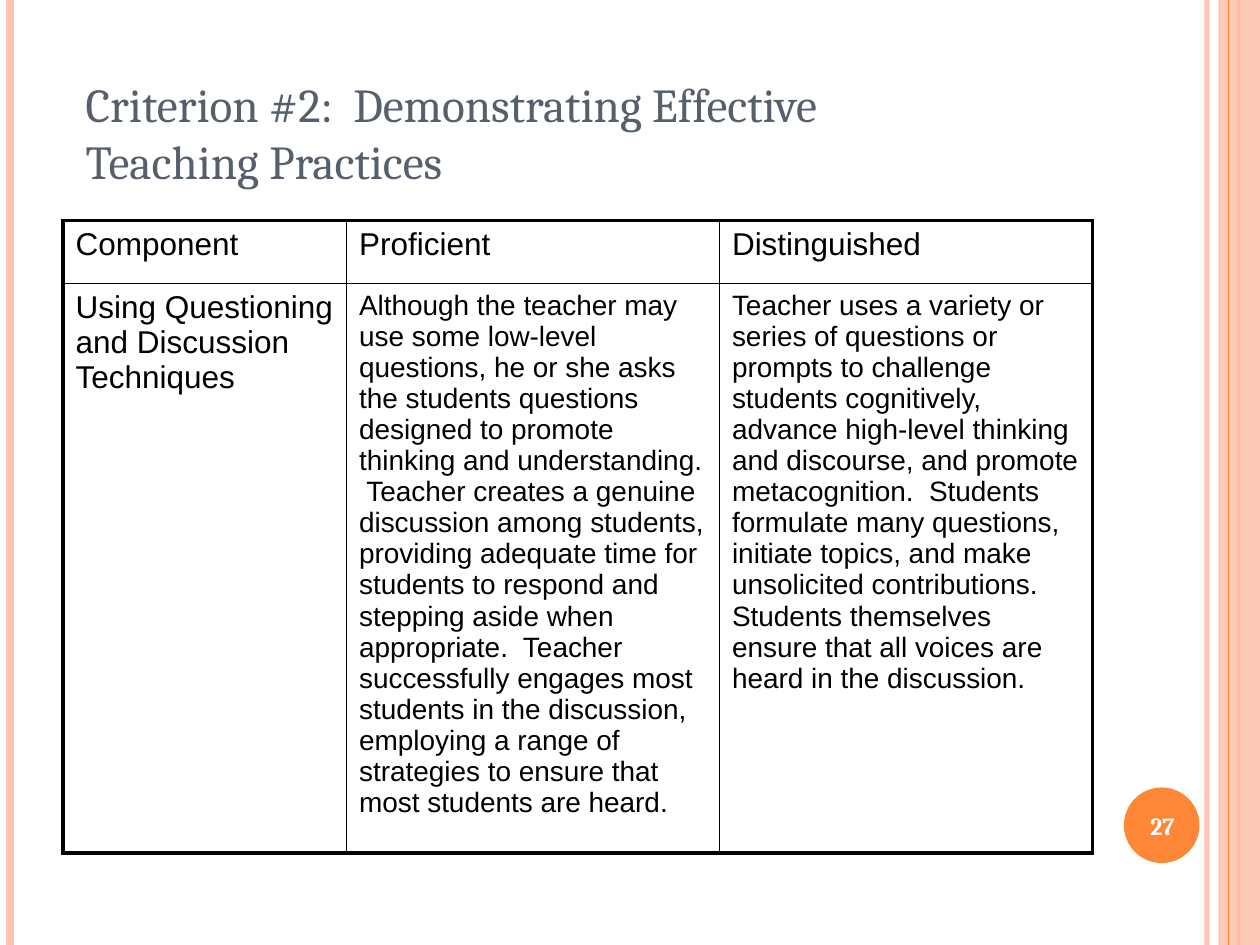
from pptx import Presentation
from pptx.dml.color import RGBColor
from pptx.enum.shapes import MSO_CONNECTOR, MSO_SHAPE
from pptx.enum.text import MSO_ANCHOR, PP_ALIGN
from pptx.oxml.ns import qn
from pptx.util import Inches, Pt
from lxml import etree

LINE = MSO_CONNECTOR.STRAIGHT
RECT, OVAL = MSO_SHAPE.RECTANGLE, MSO_SHAPE.OVAL
BOTTOM, MIDDLE = MSO_ANCHOR.BOTTOM, MSO_ANCHOR.MIDDLE
LEFT, CENTER = PP_ALIGN.LEFT, PP_ALIGN.CENTER

THEME = {
    "peach": "FEC3AE", "orange": "FE8637", "slate": "575F6D",
    "black": "000000", "white": "FFFFFF",
    "serif": "Cambria", "sans": "Arial",
    "title": 27, "label": 18, "body": 16, "number": 14,
}


def style(para, face, size, color, bold=False):
    for run in para.runs:
        font = run.font
        font.name, font.size, font.bold = THEME[face], Pt(THEME[size]), bold
        font.color.rgb = RGBColor.from_string(THEME[color])


def fade(shape, value):
    for node in shape._element.spPr.iter(qn("a:srgbClr")):
        etree.SubElement(node, qn("a:alpha"), val=str(value * 1000))


deck = Presentation()
deck.slide_width, deck.slide_height = Inches(10), Inches(7.5)
slide = deck.slides.add_slide(deck.slide_layouts[5])
shapes = slide.shapes
title = shapes.title

bars = {}
for x, color, width in [(9.58, "peach", 3), (0.08, "peach", 4.5),
                        (9.83, "orange", 1.5), (9.75, "orange", 0.75)]:
    bar = shapes.add_connector(LINE, Inches(x), 0, Inches(x), Inches(7.5))
    bar.line.color.rgb = RGBColor.from_string(THEME[color])
    bar.line.width = Pt(width)
    etree.SubElement(bar._element.spPr, qn("a:effectLst"))
    bars[x] = bar
fade(bars[9.58], 93)

for kind, x, y, w, h, color in [(RECT, 9.67, 0, 0.33, 7.5, "peach"),
                                (OVAL, 8.92, 6.25, 0.6, 0.6, "orange")]:
    shape = shapes.add_shape(kind, Inches(x), Inches(y), Inches(w), Inches(h))
    shape.shadow.inherit = False
    shape.fill.solid()
    shape.fill.fore_color.rgb = RGBColor.from_string(THEME[color])
    shape.line.fill.background()
    if kind == RECT:
        fade(shape, 87)
        bars[9.75]._element.addprevious(shape._element)

title.left, title.top = Inches(0.58), Inches(0.25)
title.width, title.height = Inches(9.08), Inches(1.3)
frame = title.text_frame
frame.text = "Criterion #2:  Demonstrating Effective\vTeaching Practices"
frame.vertical_anchor = BOTTOM
frame.paragraphs[0].alignment = LEFT
style(frame.paragraphs[0], "serif", "title", "slate")

rows = [
    ["Component", "Proficient", "Distinguished"],
    ["Using Questioning and Discussion Techniques",
     "Although the teacher may use some low-level questions, he or she asks "
     "the students questions designed to promote thinking and understanding.  "
     "Teacher creates a genuine discussion among students, providing adequate "
     "time for students to respond and stepping aside when appropriate.  "
     "Teacher successfully engages most students in the discussion, employing "
     "a range of strategies to ensure that most students are heard.",
     "Teacher uses a variety or series of questions or prompts to challenge "
     "students cognitively, advance high-level thinking and discourse, and "
     "promote metacognition.  Students formulate many questions, initiate "
     "topics, and make unsolicited contributions.  Students themselves ensure "
     "that all voices are heard in the discussion."],
]
widths, heights = [2.25, 2.96, 2.96], [0.5, 4.52]
table = shapes.add_table(2, 3, Inches(0.5), Inches(1.75),
                         Inches(sum(widths)), Inches(sum(heights))).table
table.first_row = table.horz_banding = False
for col, width in zip(table.columns, widths):
    col.width = Inches(width)
for row, height in zip(table.rows, heights):
    row.height = Inches(height)

for r, texts in enumerate(rows):
    for c, text in enumerate(texts):
        cell = table.cell(r, c)
        cell.text_frame.text = text
        para = cell.text_frame.paragraphs[0]
        para.space_before = Pt(6)
        style(para, "sans", "body" if r and c else "label", "black")
        cell.fill.background()
        props = cell._tc.get_or_add_tcPr()
        edges = [("L", c == 0), ("R", c == 2), ("T", r == 0), ("B", r == 1)]
        for i, (side, outer) in enumerate(edges):
            edge = etree.Element(qn(f"a:ln{side}"), w=str(Pt(2.25 if outer else 1)))
            fill = etree.SubElement(edge, qn("a:solidFill"))
            etree.SubElement(fill, qn("a:srgbClr"), val=THEME["black"])
            props.insert(i, edge)

box = shapes.add_textbox(Inches(8.89), Inches(6.27), Inches(0.67), Inches(0.57))
frame = box.text_frame
frame.word_wrap = True
frame.vertical_anchor = MIDDLE
frame.text = "27"
frame.paragraphs[0].alignment = CENTER
style(frame.paragraphs[0], "serif", "number", "white", True)

deck.save("out.pptx")
